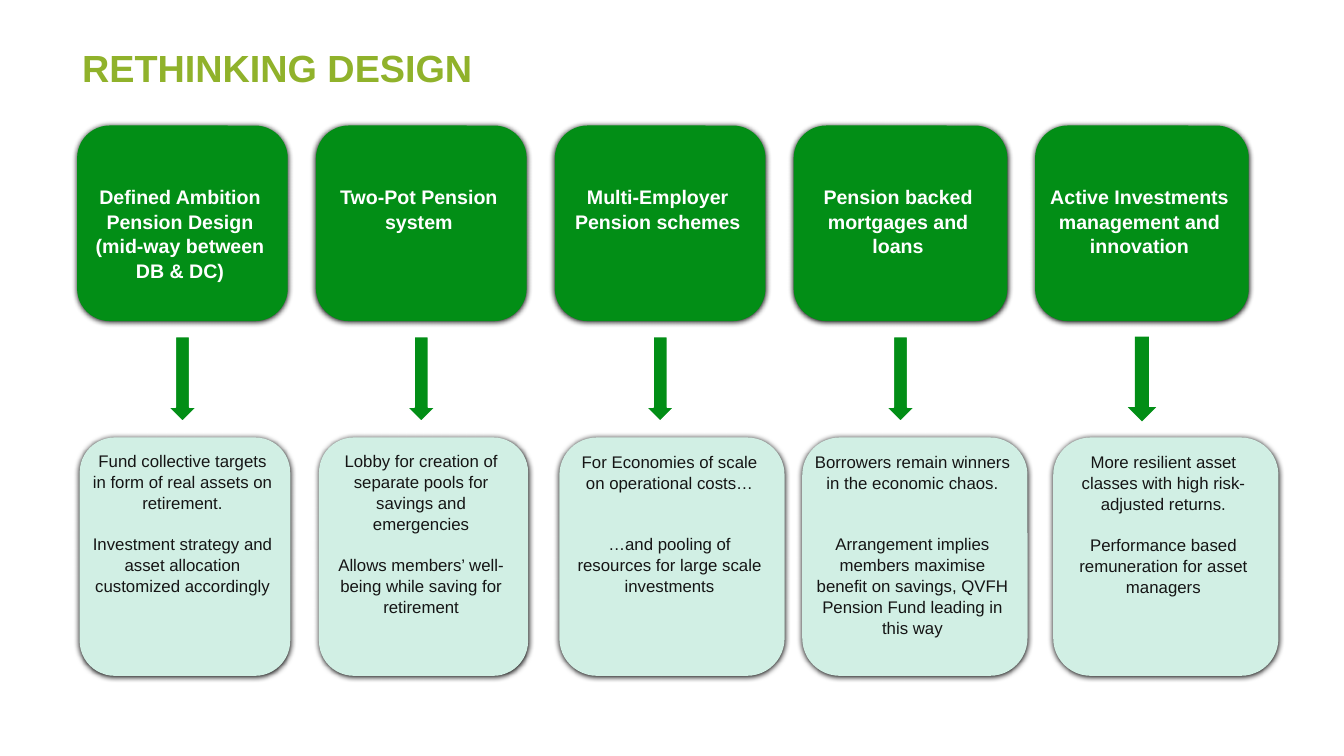
from lxml.etree import SubElement
from pptx import Presentation
from pptx.dml.color import RGBColor
from pptx.enum.shapes import MSO_SHAPE as SHAPE
from pptx.enum.text import MSO_ANCHOR as ANCHOR, PP_ALIGN as ALIGN
from pptx.oxml.ns import qn
from pptx.util import Inches, Pt

GREEN, MINT, LIME = "028E16", "D1EFE4", "90B22B"
WHITE, INK = "FFFFFF", "151515"
LINE = 28.8  # height in points of one empty line of body text

# head left, head width, body left, body width, gap in lines, head, body texts
COLS = [
    (1.53, 4.18, 1.58, 4.18, 1,
     "Defined Ambition Pension Design (mid-way between DB & DC)",
     ["Fund collective targets in form of real assets on retirement.",
      "Investment strategy and asset allocation customized accordingly"]),
    (6.27, 4.18, 6.33, 4.15, 1,
     "Two-Pot Pension system",
     ["Lobby for creation of separate pools for savings and emergencies",
      "Allows members’ well-being while saving for retirement"]),
    (11.01, 4.18, 11.1, 4.47, 2,
     "Multi-Employer Pension schemes",
     ["For Economies of scale on operational costs…",
      "…and pooling of resources for large scale investments"]),
    (15.75, 4.24, 15.92, 4.47, 2,
     "Pension backed mortgages and loans",
     ["Borrowers remain winners in the economic chaos.",
      "Arrangement implies members maximise benefit on savings, "
      "QVFH Pension Fund leading in this way"]),
    (20.54, 4.24, 20.9, 4.47, 1,
     "Active Investments management and innovation",
     ["More resilient asset classes with high risk-adjusted returns.",
      "Performance based remuneration for asset managers"]),
]


def color(code):
    return RGBColor.from_string(code)


def style(par, size, code, bold=False):
    for run in par.runs:
        font = run.font
        font.name, font.size, font.bold = "Arial", Pt(size), bold
        font.color.rgb = color(code)


def shade(shape):
    """Soft black shadow just below the shape."""
    fx = shape._element.spPr.find(qn("a:effectLst"))
    drop = SubElement(fx, qn("a:outerShdw"), blurRad=str(Pt(8.5)),
                      dist=str(Pt(1)), dir="5400000", algn="t",
                      rotWithShape="0")
    SubElement(drop, qn("a:srgbClr"), val="000000")


def solid(slide, kind, box, code):
    shape = slide.shapes.add_shape(kind, *map(Inches, box))
    shape.shadow.inherit = False
    shape.fill.solid()
    shape.fill.fore_color.rgb = color(code)
    shape.line.fill.background()
    return shape


def card(slide, box, fill, texts, size, code, bold=False, top=0.05, gap=0):
    """Rounded box with centred paragraphs that start at its top."""
    shape = solid(slide, SHAPE.ROUNDED_RECTANGLE, box, fill)
    shade(shape)
    frame = shape.text_frame
    frame.word_wrap = True
    frame.vertical_anchor = ANCHOR.TOP
    frame.margin_left, frame.margin_top = 0, Inches(top)
    frame.text = "\n".join(texts)
    for i, par in enumerate(frame.paragraphs):
        par.alignment = ALIGN.CENTER
        par.line_spacing = 1.04
        if i:
            par.space_before = Pt(gap)
        style(par, size, code, bold)


def arrow(slide, mid, y, edge):
    """Arrow that points down, centred on (mid, y)."""
    long, thick = 1.68, 0.56
    shape = solid(slide, SHAPE.RIGHT_ARROW,
                  (mid - long / 2, y - thick / 2, long, thick), GREEN)
    shape.rotation = 90
    if edge:
        shape.line.color.rgb = color(WHITE)
        shape.line.width = Pt(2)


def title(slide, box, text):
    frame = slide.shapes.add_textbox(*map(Inches, box)).text_frame
    frame.word_wrap = True
    frame.vertical_anchor = ANCHOR.MIDDLE
    frame.text = text
    par = frame.paragraphs[0]
    par.line_spacing = 0.9
    style(par, 54, LIME, True)


def column(slide, col, top, edge):
    """Head card, arrow and body card, one below the other."""
    x, wide, left, span, gap, head, body = col
    card(slide, (x, top, wide, 3.88), GREEN, [head], 28, WHITE, True, top=0.98)
    arrow(slide, x + wide / 2, top + 5.03, edge)
    card(slide, (left, top + 6.19, span, 4.73), MINT, body, 24, INK,
         gap=gap * LINE)


def main():
    deck = Presentation()
    deck.slide_width, deck.slide_height = Inches(26.67), Inches(15)
    slide = deck.slides.add_slide(deck.slide_layouts[6])
    title(slide, (1.53, 0.96, 20.91, 0.85), "RETHINKING DESIGN")
    for col in COLS:
        column(slide, col, 2.49, edge=col is not COLS[-1])
    deck.save("out.pptx")


if __name__ == "__main__":
    main()
